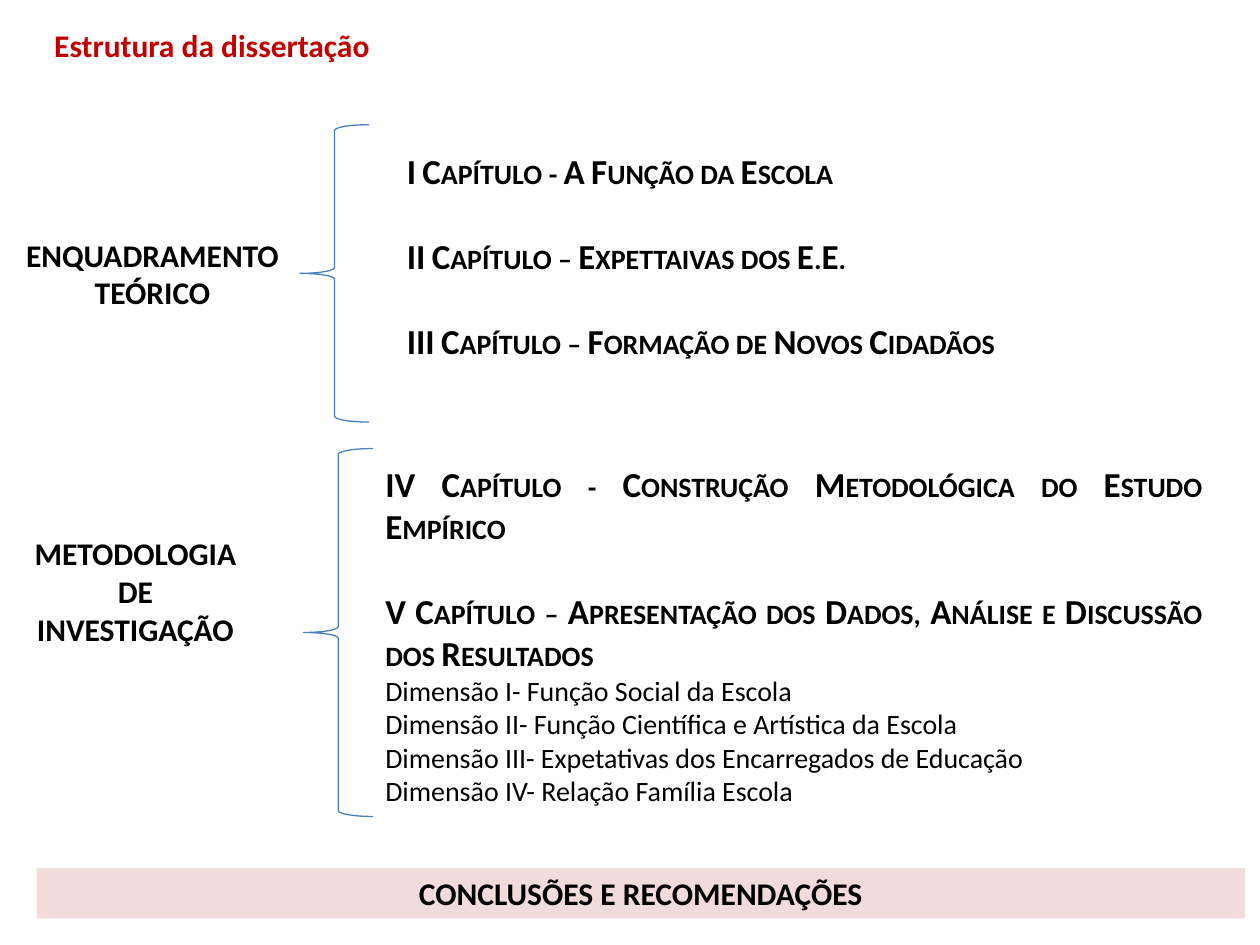
from dataclasses import dataclass

from pptx import Presentation
from pptx.dml.color import RGBColor
from pptx.enum.shapes import MSO_SHAPE as Shape
from pptx.enum.text import MSO_ANCHOR as Anchor, MSO_AUTO_SIZE as AutoSize, PP_ALIGN as Align
from pptx.util import Inches, Pt


@dataclass(frozen=True)
class Theme:
    """Colours, font and type sizes of the slide."""
    font: str = "Calibri"
    title: RGBColor = RGBColor(0xC0, 0x00, 0x00)
    text: RGBColor = RGBColor(0x00, 0x00, 0x00)
    brace: RGBColor = RGBColor(0x4B, 0x7E, 0xBC)
    band: RGBColor = RGBColor(0xF2, 0xDC, 0xDB)
    heading_size: Pt = Pt(18)
    chapter_size: Pt = Pt(20)
    detail_size: Pt = Pt(16)
    chapter_gap: Pt = Pt(24.4)
    brace_width: Pt = Pt(0.75)


THEME = Theme()

THEORY_CHAPTERS = [
    ("I Capítulo - A Função da Escola", []),
    ("II Capítulo – Expettaivas dos E.E.", []),
    ("III Capítulo – Formação de Novos Cidadãos", []),
]
METHOD_CHAPTERS = [
    ("IV Capítulo - Construção Metodológica do Estudo Empírico", []),
    ("V Capítulo – Apresentação dos Dados, Análise e Discussão dos Resultados", [
        "Dimensão I- Função Social da Escola",
        "Dimensão II- Função Científica e Artística da Escola",
        "Dimensão III- Expetativas dos Encarregados de Educação",
        "Dimensão IV- Relação Família Escola",
    ]),
]


def inches(box):
    """Turn a box of numbers into lengths."""
    return [Inches(value) for value in box]


def write(paragraph, text, size, align, color=THEME.text, bold=True):
    """Fill one paragraph and set its font."""
    paragraph.text = text
    paragraph.alignment = align
    font = paragraph.font
    font.name, font.size, font.bold = THEME.font, size, bold
    font.color.rgb = color


def add_title(slide, box, text):
    """Place the title in its placeholder."""
    title = slide.shapes.title
    title.left, title.top, title.width, title.height = inches(box)
    frame = title.text_frame
    frame.auto_size = AutoSize.NONE
    frame.vertical_anchor = Anchor.TOP
    write(frame.paragraphs[0], text, THEME.heading_size, Align.LEFT, THEME.title)


def add_text_frame(slide, box):
    """Add a wrapping text box and return its frame."""
    frame = slide.shapes.add_textbox(*inches(box)).text_frame
    frame.word_wrap = True
    return frame


def add_label(slide, box, text):
    """Add the centred name of a part."""
    frame = add_text_frame(slide, box)
    write(frame.paragraphs[0], text, THEME.heading_size, Align.CENTER)


def add_brace(slide, box):
    """Add the brace between a part and its chapters."""
    brace = slide.shapes.add_shape(Shape.LEFT_BRACE, *inches(box))
    brace.shadow.inherit = False
    brace.fill.background()
    brace.line.color.rgb = THEME.brace
    brace.line.width = THEME.brace_width


def add_chapters(slide, box, chapters):
    """List chapters in small capitals, each followed by its dimensions."""
    frame = add_text_frame(slide, box)
    for index, (chapter, dimensions) in enumerate(chapters):
        paragraph = frame.add_paragraph() if index else frame.paragraphs[0]
        write(paragraph, chapter, THEME.chapter_size, Align.JUSTIFY)
        paragraph._p.get_or_add_pPr().get_or_add_defRPr().set("cap", "small")
        if index:
            paragraph.space_before = THEME.chapter_gap
        for dimension in dimensions:
            write(frame.add_paragraph(), dimension, THEME.detail_size, Align.JUSTIFY, bold=False)


def add_part(slide, label_box, label, brace_box, chapters_box, chapters):
    """Add a part: its name, brace and chapters."""
    add_chapters(slide, chapters_box, chapters)
    add_brace(slide, brace_box)
    add_label(slide, label_box, label)


def add_conclusion(slide, box, text):
    """Add the closing band."""
    band = slide.shapes.add_shape(Shape.RECTANGLE, *inches(box))
    band.shadow.inherit = False
    band.fill.solid()
    band.fill.fore_color.rgb = THEME.band
    band.line.fill.background()
    frame = band.text_frame
    frame.word_wrap = True
    frame.vertical_anchor = Anchor.TOP
    write(frame.paragraphs[0], text, THEME.heading_size, Align.CENTER)


def main():
    """Build the slide and save it."""
    presentation = Presentation()
    presentation.slide_width, presentation.slide_height = Inches(10), Inches(7.5)
    slide = presentation.slides.add_slide(presentation.slide_layouts.get_by_name("Title Only"))
    add_title(slide, (0.33, 0.16, 6.85, 0.4), "Estrutura da dissertação")
    add_part(slide, (0.1, 1.82, 2.22, 0.71), "ENQUADRAMENTO\nTEÓRICO",
             (2.38, 0.99, 0.55, 2.36), (3.13, 1.14, 6.75, 2.12), THEORY_CHAPTERS)
    add_part(slide, (0.11, 4.19, 1.93, 1.01), "METODOLOGIA DE INVESTIGAÇÃO",
             (2.41, 3.56, 0.55, 2.92), (2.96, 3.62, 6.68, 2.86), METHOD_CHAPTERS)
    add_conclusion(slide, (0.29, 6.89, 9.59, 0.4), "CONCLUSÕES E RECOMENDAÇÕES")
    presentation.save("out.pptx")


if __name__ == "__main__":
    main()
